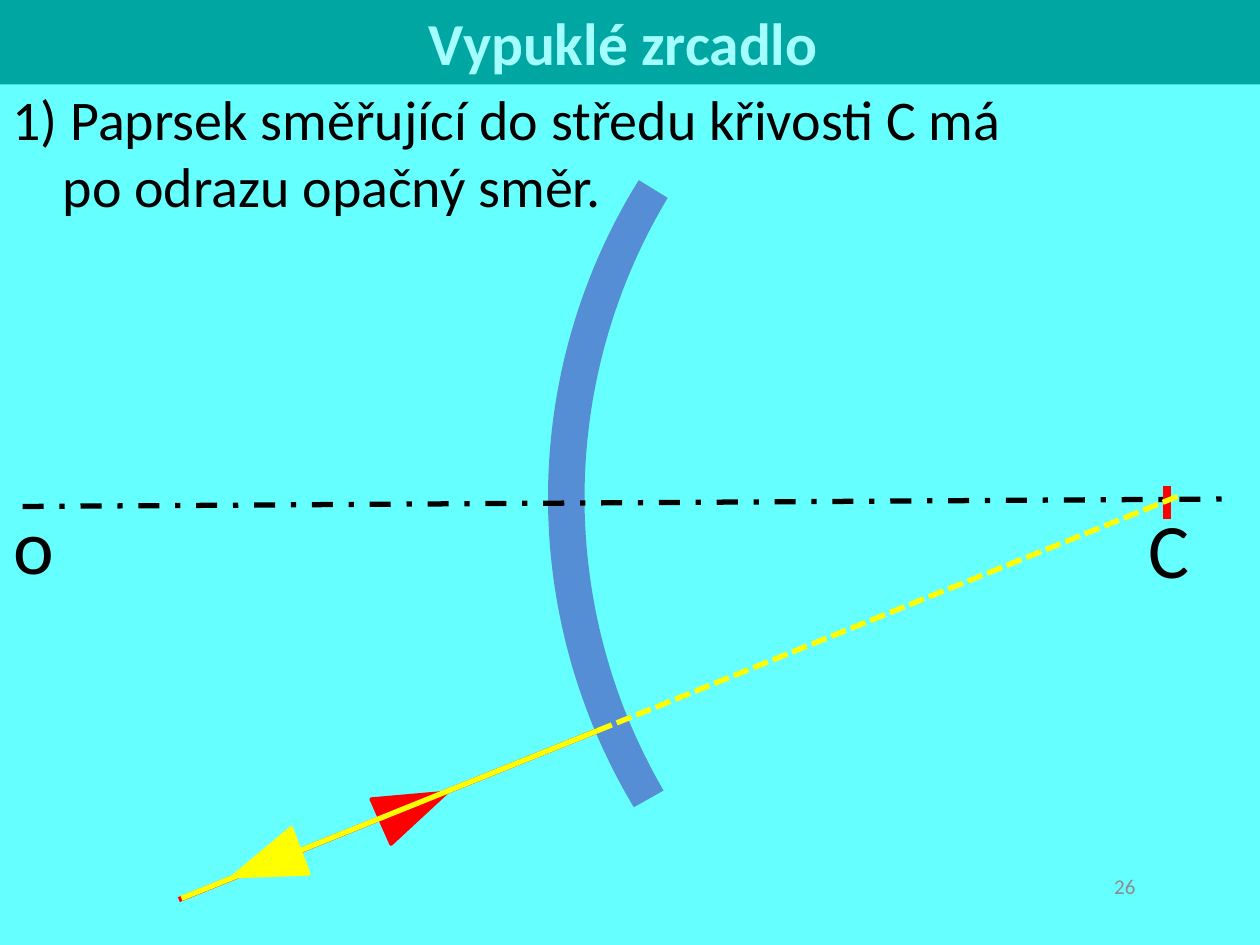
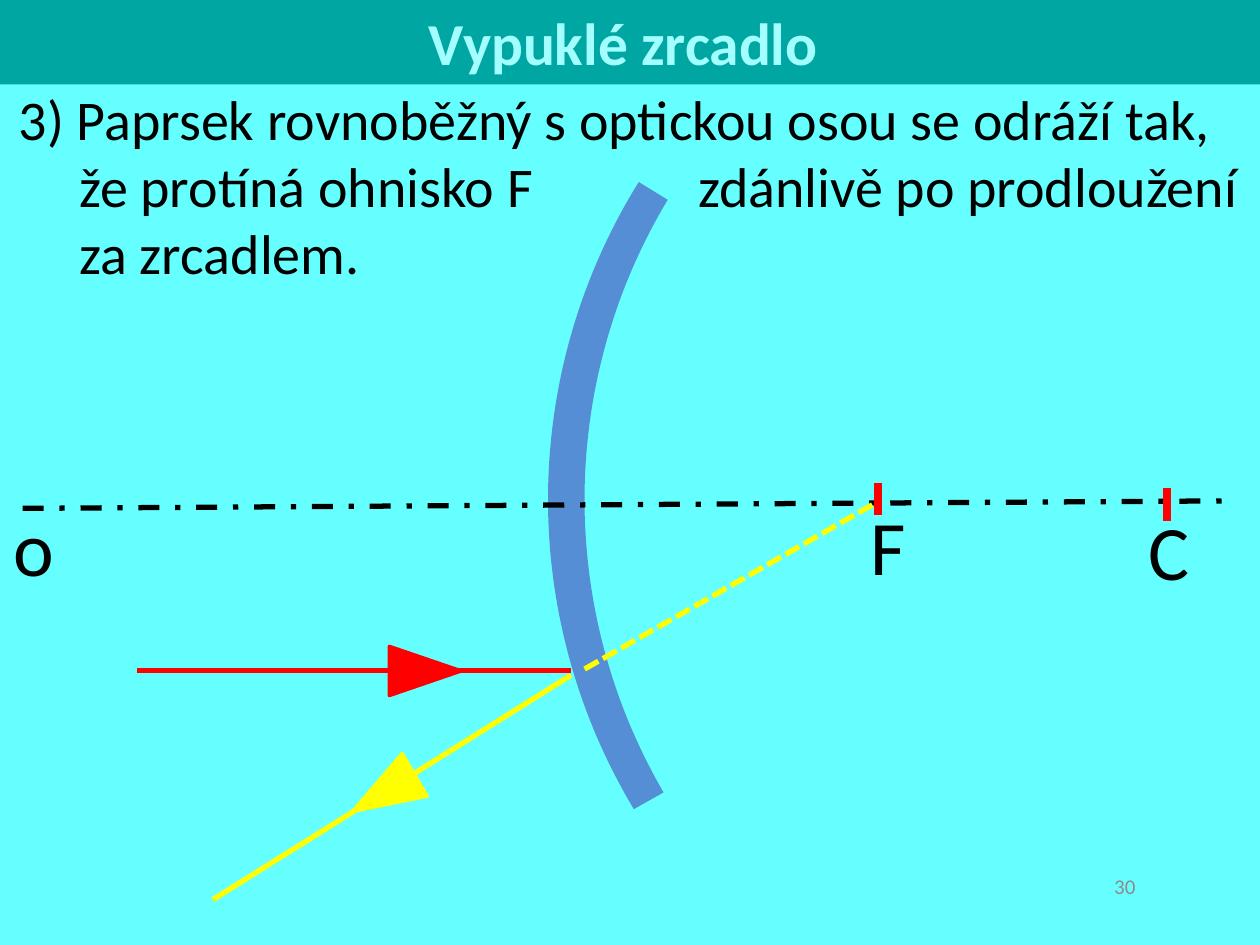
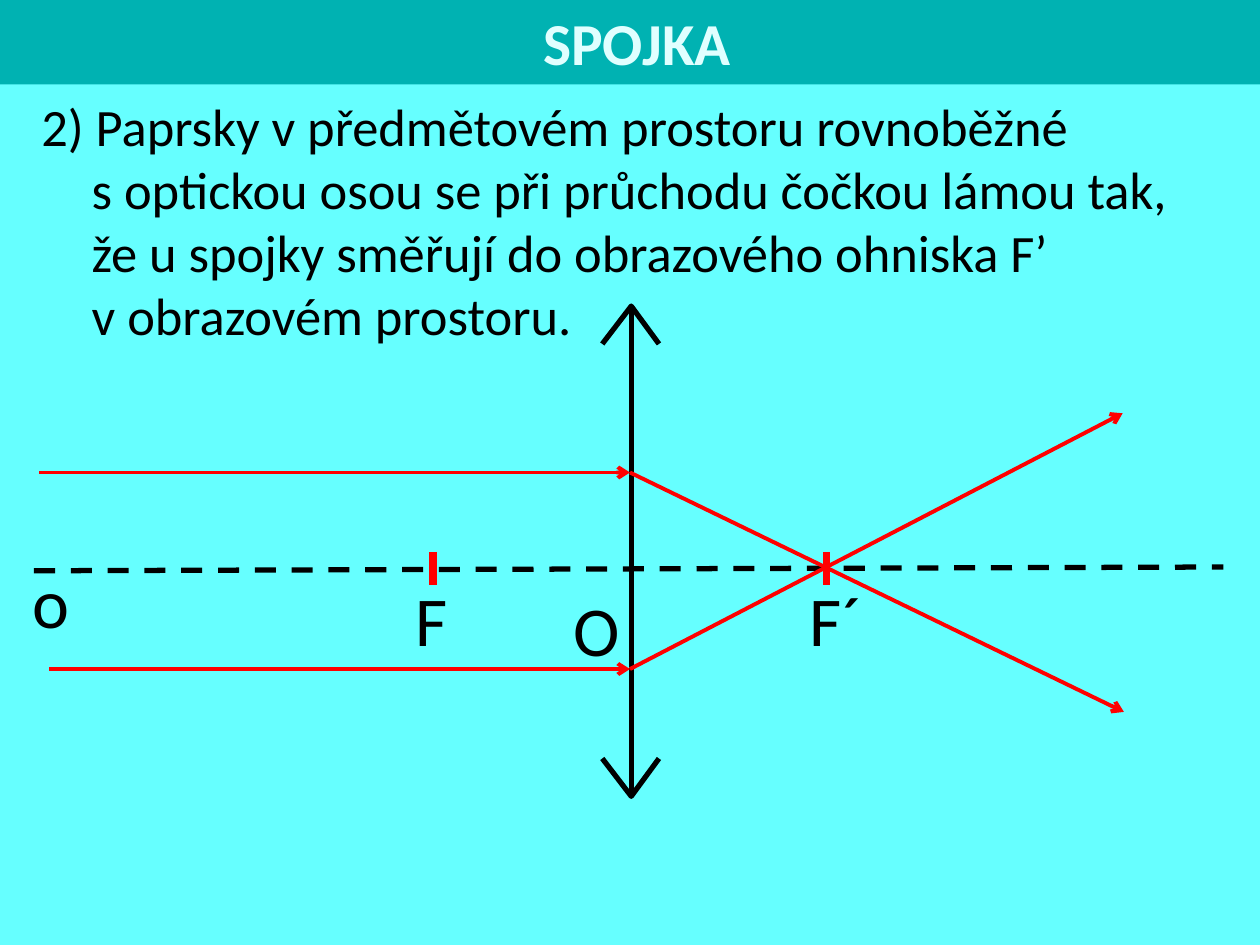
from dataclasses import dataclass
from math import cos, radians, sin

from lxml import etree
from pptx import Presentation
from pptx.dml.color import RGBColor
from pptx.enum import dml, shapes, text
from pptx.oxml.ns import qn
from pptx.util import Inches, Pt


@dataclass(frozen=True)
class Theme:
    font: str = "Calibri"
    background: str = "66FFFF"
    mirror_band: str = "00A6A2"
    mirror_title: str = "A3FFFF"
    lens_band: str = "00B2B2"
    lens_title: str = "E0FFFF"
    mirror: str = "558ED5"
    ink: str = "000000"
    red: str = "FF0000"
    yellow: str = "FFFF00"
    page: str = "8C8C8C"
    title_size: int = 34
    body_size: int = 32
    lens_body_size: int = 30
    label_size: int = 44
    lens_label_size: int = 40
    page_size: int = 12
    line: float = 3
    thin_line: float = 2.25
    tick_line: float = 4.5


T = Theme()
DASH = dml.MSO_LINE
ALIGN = text.PP_ALIGN
ANCHOR = text.MSO_ANCHOR


def rgb(value):
    return RGBColor.from_string(value)


def add_slide(prs):
    s = prs.slides.add_slide(prs.slide_layouts[6])
    s.background.fill.solid()
    s.background.fill.fore_color.rgb = rgb(T.background)
    return s


def paint(sp, fill=None, line=None, width=T.line):
    sp.shadow.inherit = False
    if fill:
        sp.fill.solid()
        sp.fill.fore_color.rgb = rgb(fill)
    else:
        sp.fill.background()
    if line:
        sp.line.color.rgb = rgb(line)
        sp.line.width = Pt(width)
    else:
        sp.line.fill.background()


def write(sp, content, size, color=T.ink, bold=False, align=ALIGN.LEFT,
          anchor=ANCHOR.TOP, left=0, hang=0):
    """Write one paragraph; a list of strings gives one run for each."""
    tf = sp.text_frame
    tf.word_wrap = True
    tf.auto_size = text.MSO_AUTO_SIZE.SHAPE_TO_FIT_TEXT
    tf.vertical_anchor = anchor
    p = tf.paragraphs[0]
    if isinstance(content, str):
        p.text = content
    else:
        for part in content:
            p.add_run().text = part
    p.alignment = align
    pPr = p._p.get_or_add_pPr()
    pPr.set("marL", str(Inches(left + hang)))
    pPr.set("indent", str(-Inches(hang)))
    for r in p.runs:
        r.font.name = T.font
        r.font.size = Pt(size)
        r.font.bold = bold
        r.font.color.rgb = rgb(color)
    return p


def add_text(s, box, content, size, **style):
    sp = s.shapes.add_textbox(*map(Inches, box))
    return write(sp, content, size, **style)


def add_title(s, title, band, color, **style):
    sp = s.shapes.add_shape(shapes.MSO_SHAPE.RECTANGLE, 0, 0, Inches(10), Inches(0.67))
    paint(sp, band)
    write(sp, title, T.title_size, color, True, ALIGN.CENTER, **style)


def add_label(s, x, y, name, size=T.label_size):
    add_text(s, (x, y, 0.7, 0.84), name, size)


def add_page_number(s, number):
    add_text(s, (6.78, 6.83, 2.33, 0.4), str(number), T.page_size, color=T.page,
             align=ALIGN.RIGHT, anchor=ANCHOR.MIDDLE)


def add_line(s, start, end, color, width=T.line, dash=None, arrow=False):
    c = s.shapes.add_connector(shapes.MSO_CONNECTOR.STRAIGHT, *map(Inches, (*start, *end)))
    c.line.color.rgb = rgb(color)
    c.line.width = Pt(width)
    if dash:
        c.line.dash_style = dash
    if arrow:
        etree.SubElement(c.line._get_or_add_ln(), qn("a:tailEnd"), type="arrow")
    etree.SubElement(c._element.spPr, qn("a:effectLst"))


def add_tick(s, x, y):
    add_line(s, (x, y), (x, y + 0.26), T.red, T.tick_line)


def add_ray_head(s, x, y, rotation, color):
    sp = s.shapes.add_shape(shapes.MSO_SHAPE.ISOSCELES_TRIANGLE,
                            *map(Inches, (x, y, 0.39, 0.57)))
    sp.rotation = rotation
    paint(sp, color, color, 2)


def add_outline(s, points, closed):
    points = [(Inches(x), Inches(y)) for x, y in points]
    builder = s.shapes.build_freeform(*points[0])
    builder.add_line_segments(points[1:], close=closed)
    return builder.convert_to_shape()


def arc(cx, cy, radius, top, bottom, steps=60):
    """Points on the left side of a circle, from top to bottom degrees."""
    angles = [radians(top + (bottom - top) * i / steps) for i in range(steps + 1)]
    return [(cx - radius * cos(a), cy + radius * sin(a)) for a in angles]


def add_mirror(s, shift=0.0):
    """Curved mirror, optical axis and centre of curvature."""
    cy = 3.95 + shift
    outer = arc(9.12, cy, 4.77, -31.9, 31)
    inner = arc(9.26, cy, 4.62, -31, 30.2)
    paint(add_outline(s, outer + inner[::-1], True), T.mirror)
    add_line(s, (0.18, 4.02 + shift), (9.8, 3.96 + shift), T.ink, dash=DASH.DASH_DOT)
    add_label(s, 9.02, 3.93 + shift, "C")
    add_label(s, 0.01, 3.9 + shift, "o")
    add_tick(s, 9.26, 3.86 + shift)


def add_lens(s):
    """Converging lens, optical axis and both foci."""
    x, top, bottom = 5.01, 2.43, 6.32
    add_line(s, (0.27, 4.53), (9.71, 4.5), T.ink, dash=DASH.DASH)
    add_line(s, (x, top), (x, bottom), T.ink)
    for tip, base in ((top, top + 0.3), (bottom, bottom - 0.3)):
        head = add_outline(s, [(x - 0.23, base), (x, tip), (x + 0.22, base)], False)
        paint(head, line=T.ink)
    for focus in (3.44, 6.56):
        add_tick(s, focus, 4.38)
    for lx, ly, name in ((3.2, 4.53, "F"), (6.33, 4.53, "F´"),
                         (0.16, 4.38, "o"), (4.45, 4.61, "O")):
        add_label(s, lx, ly, name, T.lens_label_size)


def mirror_slide(prs, page, shift=0.0):
    s = add_slide(prs)
    add_mirror(s, shift)
    add_page_number(s, page)
    add_title(s, "Vypuklé zrcadlo ", T.mirror_band, T.mirror_title)
    return s


def centre_ray_slide(prs):
    s = mirror_slide(prs, 26)
    add_text(s, (0, 0.62, 9.98, 1.18),
             "1) Paprsek směřující do středu křivosti C má \npo odrazu opačný směr.",
             T.body_size, hang=0.4)
    hit = (4.74, 5.8)
    add_ray_head(s, 3.09, 6.12, 66.1, T.red)
    add_line(s, (1.42, 7.14), hit, T.red)
    add_ray_head(s, 1.92, 6.57, 249, T.yellow)
    add_line(s, (1.44, 7.13), hit, T.yellow)
    add_line(s, hit, (9.37, 3.93), T.yellow, dash=DASH.SQUARE_DOT)


def parallel_ray_slide(prs):
    s = mirror_slide(prs, 30, shift=0.015)
    add_line(s, (4.64, 5.31), (6.97, 3.98), T.yellow, dash=DASH.SQUARE_DOT)
    p = add_text(s, (0.05, 0.62, 9.98, 1.72),
                 ["3) Paprsek rovnoběžný s\u00a0optickou osou se odráží tak, že protíná ohnisko F",
                  " ", "zdánlivě po prodloužení za zrcadlem."],
                 T.body_size, hang=0.48)
    # The widened space leaves room for the mirror.
    p.runs[1].font._element.set("spc", "8700")
    add_label(s, 6.81, 3.91, "F")
    add_tick(s, 6.97, 3.83)
    add_ray_head(s, 3.18, 5.04, 90, T.red)
    add_line(s, (1.09, 5.32), (4.53, 5.32), T.red)
    add_ray_head(s, 2.85, 6.01, 239.5, T.yellow)
    add_line(s, (1.69, 7.14), (4.53, 5.36), T.yellow)


def lens_slide(prs):
    s = add_slide(prs)
    add_title(s, "SPOJKA", T.lens_band, T.lens_title, anchor=ANCHOR.MIDDLE, left=0.11)
    add_lens(s)
    add_text(s, (0.23, 0.7, 9.77, 2.12),
             "2) Paprsky v\u00a0předmětovém prostoru rovnoběžné s\u00a0optickou osou "
             "se při průchodu čočkou lámou tak, \nže u spojky směřují do obrazového "
             "ohniska F’ v\u00a0obrazovém prostoru.",
             T.lens_body_size, hang=0.4)
    for start, y, end in ((0.31, 3.75, (8.92, 5.65)), (0.39, 5.31, (8.91, 3.28))):
        add_line(s, (start, y), (5, y), T.red, T.thin_line, arrow=True)
        add_line(s, (5, y), end, T.red, T.thin_line, arrow=True)


def main():
    prs = Presentation()
    prs.slide_width, prs.slide_height = Inches(10), Inches(7.5)
    centre_ray_slide(prs)
    parallel_ray_slide(prs)
    lens_slide(prs)
    prs.save("out.pptx")


if __name__ == "__main__":
    main()
